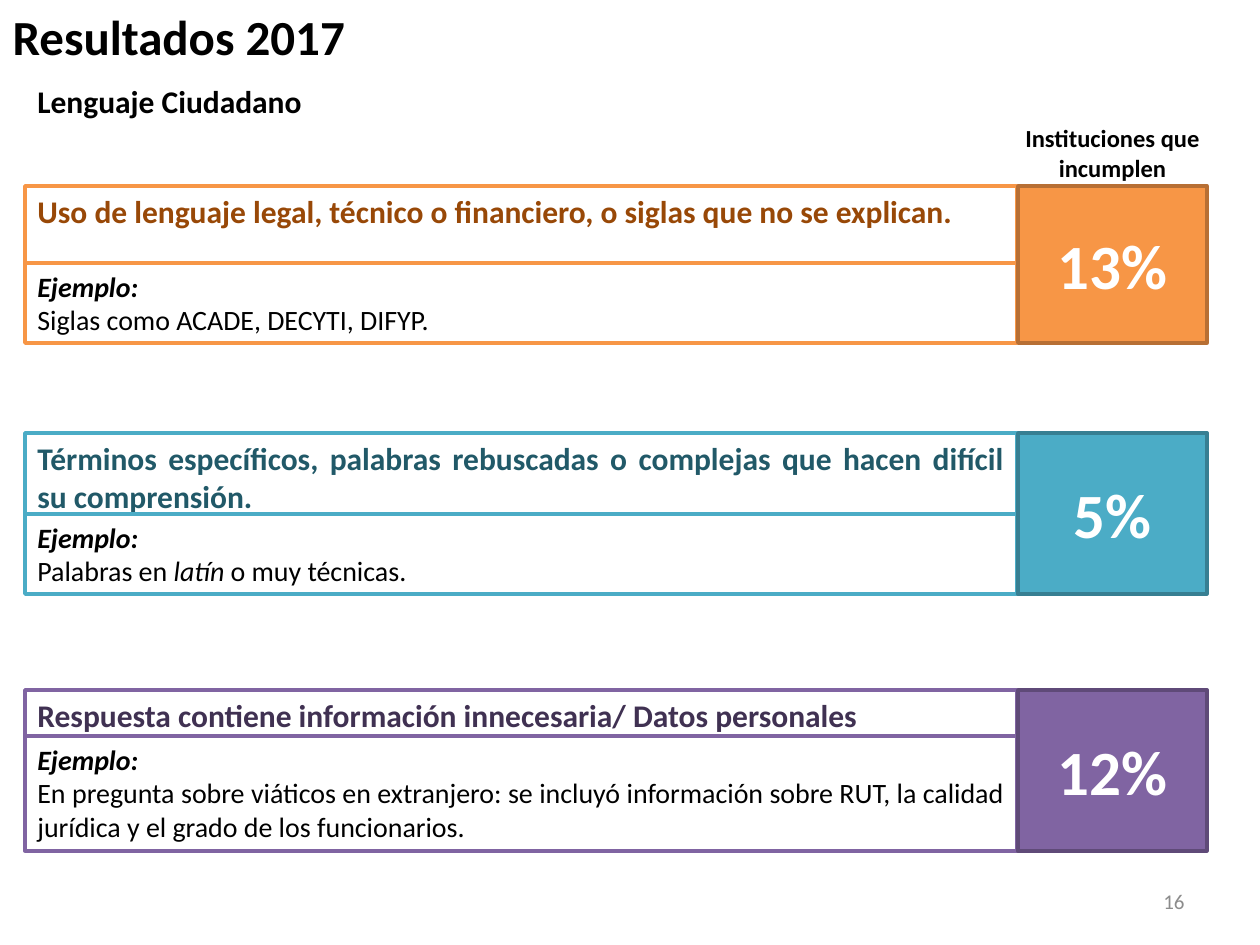
"""Build the slide on citizen language results for 2017."""
from dataclasses import dataclass

from pptx import Presentation
from pptx.dml.color import RGBColor
from pptx.enum.shapes import MSO_SHAPE as Shape
from pptx.enum.text import MSO_ANCHOR as Anchor, MSO_AUTO_SIZE as AutoSize, PP_ALIGN as Align
from pptx.util import Emu, Pt

TITLE = "Resultados 2017"
SUBTITLE = "Lenguaje Ciudadano"
COLUMN_HEADING = "Instituciones que incumplen"
EXAMPLE_LABEL = "Ejemplo:"
PAGE_NUMBER = "16"

FINDINGS = [
    {"heading": "Uso de lenguaje legal, técnico o financiero, o siglas que no se explican.",
     "example": [("Siglas como ACADE, DECYTI, DIFYP.", False)],
     "share": "13%", "colors": "orange",
     "top": 186, "heading_height": 89, "split": 263, "bottom": 343},
    {"heading": "Términos específicos, palabras rebuscadas o complejas que hacen difícil "
                "su comprensión.",
     "example": [("Palabras en ", False), ("latín ", True), ("o muy técnicas.", False)],
     "share": "5%", "colors": "teal",
     "top": 433, "heading_height": 89, "split": 514, "bottom": 594},
    {"heading": "Respuesta contiene información innecesaria/ Datos personales",
     "example": [("En pregunta sobre viáticos en extranjero: se incluyó información sobre RUT, "
                  "la calidad jurídica y el grado de los funcionarios.", False)],
     "share": "12%", "colors": "purple",
     "top": 690, "heading_height": 50, "split": 736, "bottom": 851},
]


@dataclass(frozen=True)
class Theme:
    font: str = "Calibri"
    black: str = "000000"
    white: str = "FFFFFF"
    gray: str = "8C8C8C"
    orange: tuple = ("F79646", "B76F34", "984807")
    teal: tuple = ("4BACC6", "377F92", "215968")
    purple: tuple = ("8064A2", "5F4A78", "403152")
    title: int = 28
    heading: int = 18
    body: int = 16
    label: int = 14
    share: int = 36
    number: int = 12
    line: int = 2


THEME = Theme()
SCALE = 914400 / 126
LEFT, TEXT_WIDTH = 25, 992
SHARE_LEFT, SHARE_WIDTH = 1018, 189


def px(value):
    return Emu(round(value * SCALE))


def box(*bounds):
    return [px(value) for value in bounds]


def write(shape, paragraphs, size, color=THEME.black, bold=False, align=Align.LEFT,
          anchor=Anchor.TOP, wrap=True):
    """Fill a shape with paragraphs, each a list of (text, bold, italic) runs or a string."""
    frame = shape.text_frame
    frame.auto_size = AutoSize.NONE
    frame.word_wrap = wrap
    frame.vertical_anchor = anchor
    for index, runs in enumerate(paragraphs):
        paragraph = frame.add_paragraph() if index else frame.paragraphs[0]
        paragraph.alignment = align
        for text, run_bold, italic in [(runs, bold, False)] if isinstance(runs, str) else runs:
            run = paragraph.add_run()
            run.text = text
            font = run.font
            font.name, font.size = THEME.font, Pt(size)
            font.bold, font.italic = run_bold, italic
            font.color.rgb = RGBColor.from_string(color)


def add_panel(slide, bounds, fill, line):
    panel = slide.shapes.add_shape(Shape.RECTANGLE, *box(*bounds))
    panel.shadow.inherit = False
    panel.fill.solid()
    panel.fill.fore_color.rgb = RGBColor.from_string(fill)
    panel.line.color.rgb = RGBColor.from_string(line)
    panel.line.width = Pt(THEME.line)
    return panel


def add_finding(slide, finding):
    main, edge, dark = getattr(THEME, finding["colors"])
    top, split, bottom = finding["top"], finding["split"], finding["bottom"]

    heading = add_panel(slide, (LEFT, top, TEXT_WIDTH, finding["heading_height"]),
                        THEME.white, main)
    write(heading, [finding["heading"]], THEME.heading, color=dark, bold=True,
          align=Align.JUSTIFY)

    example = add_panel(slide, (LEFT, split, TEXT_WIDTH, bottom - split), THEME.white, main)
    example_runs = [(text, False, italic) for text, italic in finding["example"]]
    write(example, [[(EXAMPLE_LABEL, True, True)], example_runs], THEME.body,
          align=Align.JUSTIFY)

    share = add_panel(slide, (SHARE_LEFT, top, SHARE_WIDTH, bottom - top), main, edge)
    write(share, [finding["share"]], THEME.share, color=THEME.white, bold=True,
          align=Align.CENTER, anchor=Anchor.MIDDLE)


def main():
    presentation = Presentation()
    presentation.slide_width, presentation.slide_height = box(1260, 945)
    slide = presentation.slides.add_slide(presentation.slide_layouts[5])

    title = slide.shapes.title
    title.left, title.top, title.width, title.height = box(0, 0, 1245, 72)
    write(title, [TITLE], THEME.title, bold=True)

    subtitle = slide.shapes.add_textbox(*box(LEFT, 76, 292, 50))
    write(subtitle, [SUBTITLE], THEME.heading, bold=True, wrap=False)

    for finding in FINDINGS:
        add_finding(slide, finding)

    column_heading = slide.shapes.add_textbox(*box(964, 117, 297, 72))
    write(column_heading, [COLUMN_HEADING], THEME.label, bold=True, align=Align.CENTER)

    number = slide.shapes.add_textbox(*box(903, 876, 294, 50))
    write(number, [PAGE_NUMBER], THEME.number, color=THEME.gray, align=Align.RIGHT,
          anchor=Anchor.MIDDLE)

    presentation.save("out.pptx")


if __name__ == "__main__":
    main()
